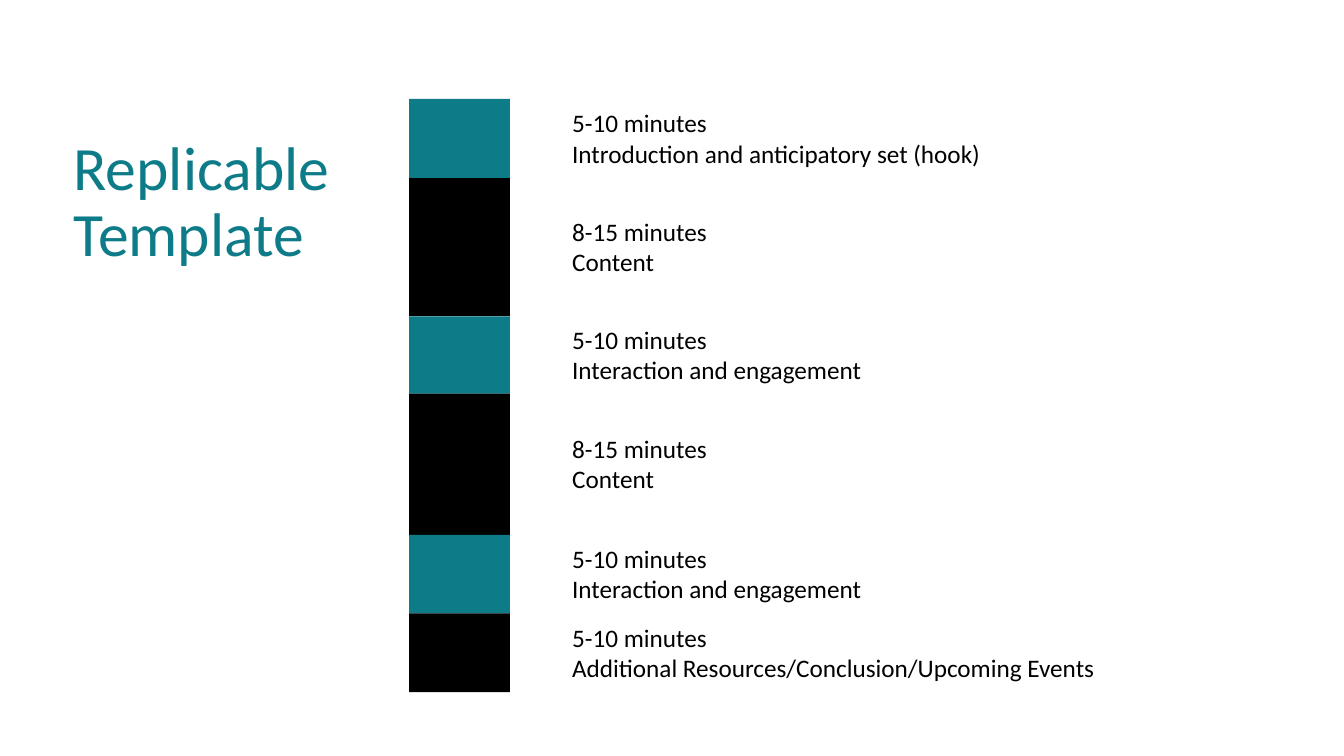
from pptx import Presentation
from pptx.dml.color import RGBColor
from pptx.enum.shapes import MSO_SHAPE
from pptx.enum.text import MSO_ANCHOR, MSO_AUTO_SIZE, PP_ALIGN
from pptx.util import Cm, Pt

TEAL, BLACK = "0E7C88", "000000"
FONT = "Calibri"

# Timeline geometry in centimetres
BAR_LEFT, BAR_TOP, BAR_WIDTH = 10.31, 2.49, 2.54
LABEL_LEFT, LABEL_WIDTH, LABEL_HEIGHT = 14.17, 17.09, 1.8

# Block height, colour, duration, activity
STAGES = [
    (2.0, TEAL, "5-10 minutes", "Introduction and anticipatory set (hook)"),
    (3.48, BLACK, "8-15 minutes", "Content"),
    (1.95, TEAL, "5-10 minutes", "Interaction and engagement"),
    (3.56, BLACK, "8-15 minutes", "Content"),
    (1.98, TEAL, "5-10 minutes", "Interaction and engagement"),
    (1.98, BLACK, "5-10 minutes", "Additional Resources/Conclusion/Upcoming Events"),
]


def colour(value):
    return RGBColor.from_string(value)


def apply_format(target, values):
    for name, value in values.items():
        setattr(target, name, value)


def format_font(font, size, value):
    apply_format(font, {"name": FONT, "size": Pt(size), "bold": False})
    font.color.rgb = colour(value)


def add_title(page, text):
    title = page.shapes.title
    apply_format(title, {"left": Cm(1.6), "top": Cm(3.33),
                         "width": Cm(8.66), "height": Cm(8.66)})
    frame = title.text_frame
    apply_format(frame, {"word_wrap": True, "auto_size": MSO_AUTO_SIZE.NONE,
                         "vertical_anchor": MSO_ANCHOR.TOP})
    para = frame.paragraphs[0]
    para.text = text
    apply_format(para, {"alignment": PP_ALIGN.LEFT, "line_spacing": 0.9})
    for span in para.runs:
        format_font(span.font, 44, TEAL)


def add_block(page, top, height, fill):
    block = page.shapes.add_shape(MSO_SHAPE.RECTANGLE, Cm(BAR_LEFT), Cm(top),
                                  Cm(BAR_WIDTH), Cm(height))
    block.shadow.inherit = False
    block.fill.solid()
    block.fill.fore_color.rgb = colour(fill)
    block.line.fill.background()


def add_label(page, middle, lines):
    box = page.shapes.add_textbox(Cm(LABEL_LEFT), Cm(middle - LABEL_HEIGHT / 2),
                                  Cm(LABEL_WIDTH), Cm(LABEL_HEIGHT))
    frame = box.text_frame
    apply_format(frame, {"word_wrap": True,
                         "auto_size": MSO_AUTO_SIZE.SHAPE_TO_FIT_TEXT})
    frame.text = "\n".join(lines)
    for para in frame.paragraphs:
        for span in para.runs:
            format_font(span.font, 18, BLACK)


def main():
    deck = Presentation()
    apply_format(deck, {"slide_width": Cm(33.87), "slide_height": Cm(19.05)})
    page = deck.slides.add_slide(deck.slide_layouts.get_by_name("Title Only"))
    add_title(page, "Replicable\vTemplate")

    # Stacked blocks, each with a label centred beside it
    top = BAR_TOP
    for height, fill, duration, activity in STAGES:
        add_block(page, top, height, fill)
        add_label(page, top + height / 2, [duration, activity])
        top += height

    deck.save("out.pptx")


if __name__ == "__main__":
    main()
